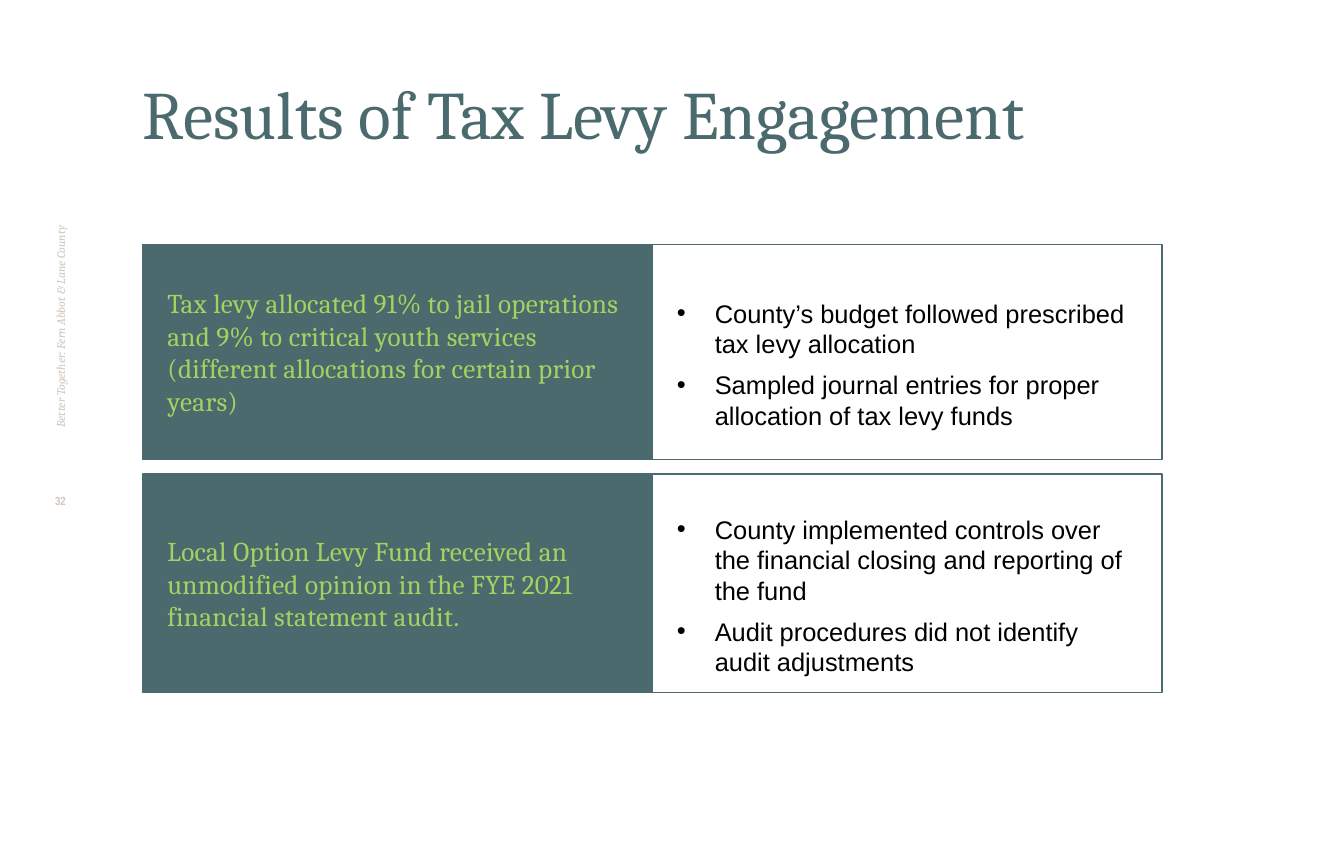
from pptx import Presentation
from pptx.dml.color import RGBColor
from pptx.enum.text import MSO_ANCHOR, MSO_AUTO_SIZE, PP_ALIGN
from pptx.oxml.ns import qn
from pptx.util import Inches, Pt
from lxml import etree

TOP, MIDDLE, BOTTOM = MSO_ANCHOR.TOP, MSO_ANCHOR.MIDDLE, MSO_ANCHOR.BOTTOM
LEFT, CENTER = PP_ALIGN.LEFT, PP_ALIGN.CENTER
NO_AUTOFIT = MSO_AUTO_SIZE.NONE

COLORS = {"teal": "4B6A6E", "lime": "A6D060", "sand": "D1C6BD", "black": "000000"}
FORMATS = {
    "title": {"name": "Cambria", "size": Pt(40), "bold": False, "color": "teal"},
    "finding": {"name": "Cambria", "size": Pt(16), "bold": False, "color": "lime"},
    "detail": {"name": "Arial", "size": Pt(15), "bold": False, "color": "black"},
    "tagline": {"name": "Cambria", "size": Pt(7), "italic": True, "color": "sand"},
    "number": {"name": "Arial Narrow", "size": Pt(7), "bold": True, "color": "sand"},
}

SLIDE_W, SLIDE_H = 11, 7
COLUMN_W = 4.17
MARGIN = 1.17
RAIL = (0.31, 0.37)
INDENT = Inches(0.31)

RESULTS = [
    (2, 1.76,
     "Tax levy allocated 91% to jail operations and 9% to critical youth services "
     "(different allocations for certain prior years)",
     ["County’s budget followed prescribed tax levy allocation",
      "Sampled journal entries for proper allocation of tax levy funds"]),
    (3.88, 1.79,
     "Local Option Levy Fund received an unmodified opinion in the FYE 2021 "
     "financial statement audit.",
     ["County implemented controls over the financial closing and reporting of the fund",
      "Audit procedures did not identify audit adjustments"]),
]


def color(key):
    return RGBColor.from_string(COLORS[key])


def place(shape, box):
    for side, length in zip(("left", "top", "width", "height"), box):
        setattr(shape, side, Inches(length))


def set_frame(shape, anchor, insets=(0, 0, 0, 0)):
    frame = shape.text_frame
    settings = {"word_wrap": True, "auto_size": NO_AUTOFIT, "vertical_anchor": anchor}
    sides = ("margin_left", "margin_top", "margin_right", "margin_bottom")
    settings.update(zip(sides, map(Inches, insets)))
    for name, value in settings.items():
        setattr(frame, name, value)
    return frame


def write(paragraph, text, style, align=LEFT):
    paragraph.alignment = align
    paragraph.space_before = Pt(0)
    run = paragraph.add_run()
    run.text = text
    for name, value in FORMATS[style].items():
        if name == "color":
            run.font.color.rgb = color(value)
        else:
            setattr(run.font, name, value)
    return run


def add_bullet(paragraph):
    properties = paragraph._p.get_or_add_pPr()
    properties.set("marL", str(INDENT))
    properties.set("indent", str(-INDENT))
    etree.SubElement(properties, qn("a:buFont")).set("typeface", "Arial")
    etree.SubElement(properties, qn("a:buChar")).set("char", "•")


def outline(shape):
    shape.line.color.rgb = color("teal")
    shape.line.width = Pt(0.75)


def build_title(title, box):
    place(title, box)
    frame = set_frame(title, BOTTOM)
    write(frame.paragraphs[0], "Results of Tax Levy Engagement", "title")


def build_result(finding, detail, box, statement, points):
    left, top, width, height = box
    half = width / 2
    place(finding, (left, top, half, height))
    place(detail, (left + half, top, half, height))
    outline(finding)
    outline(detail)
    finding.fill.solid()
    finding.fill.fore_color.rgb = color("teal")

    paragraph = set_frame(finding, MIDDLE, (0.2, 0, 0.2, 0)).paragraphs[0]
    run = write(paragraph, statement, "finding")
    run._r.get_or_add_rPr().set("spc", "20")
    paragraph.line_spacing = Pt(19.2)

    frame = set_frame(detail, MIDDLE, (0.2, 0.2, 0.2, 0))
    for index, point in enumerate(points):
        paragraph = frame.add_paragraph() if index else frame.paragraphs[0]
        add_bullet(paragraph)
        write(paragraph, point, "detail")
        paragraph.line_spacing = Pt(18)
        if index:
            paragraph.space_before = Pt(6)


def build_rail(slide, box):
    left, top, width, height = map(Inches, box)
    tagline = slide.shapes.add_textbox(left, top, width, Inches(3))
    frame = set_frame(tagline, MIDDLE)
    frame._txBody.bodyPr.set("vert", "vert270")
    write(frame.paragraphs[0], "Better Together: Fern Abbot & Lane County", "tagline")

    number_h = Inches(0.38)
    number = slide.shapes.add_textbox(left, top + height - number_h, width, number_h)
    write(set_frame(number, TOP).paragraphs[0], "32", "number", CENTER)


def main():
    deck = Presentation()
    deck.slide_width, deck.slide_height = Inches(SLIDE_W), Inches(SLIDE_H)
    slide = deck.slides.add_slide(deck.slide_layouts.get_by_name("Comparison"))
    title, *panels = slide.placeholders
    build_rail(slide, (RAIL[0], 0.5, RAIL[1], 3.92))
    build_title(title, (MARGIN, 0.5, 9.08, 0.75))
    for row, (top, height, statement, points) in enumerate(RESULTS):
        finding, detail = panels[2 * row:2 * row + 2]
        build_result(finding, detail, (MARGIN, top, 2 * COLUMN_W, height), statement, points)
    deck.save("out.pptx")


if __name__ == "__main__":
    main()
